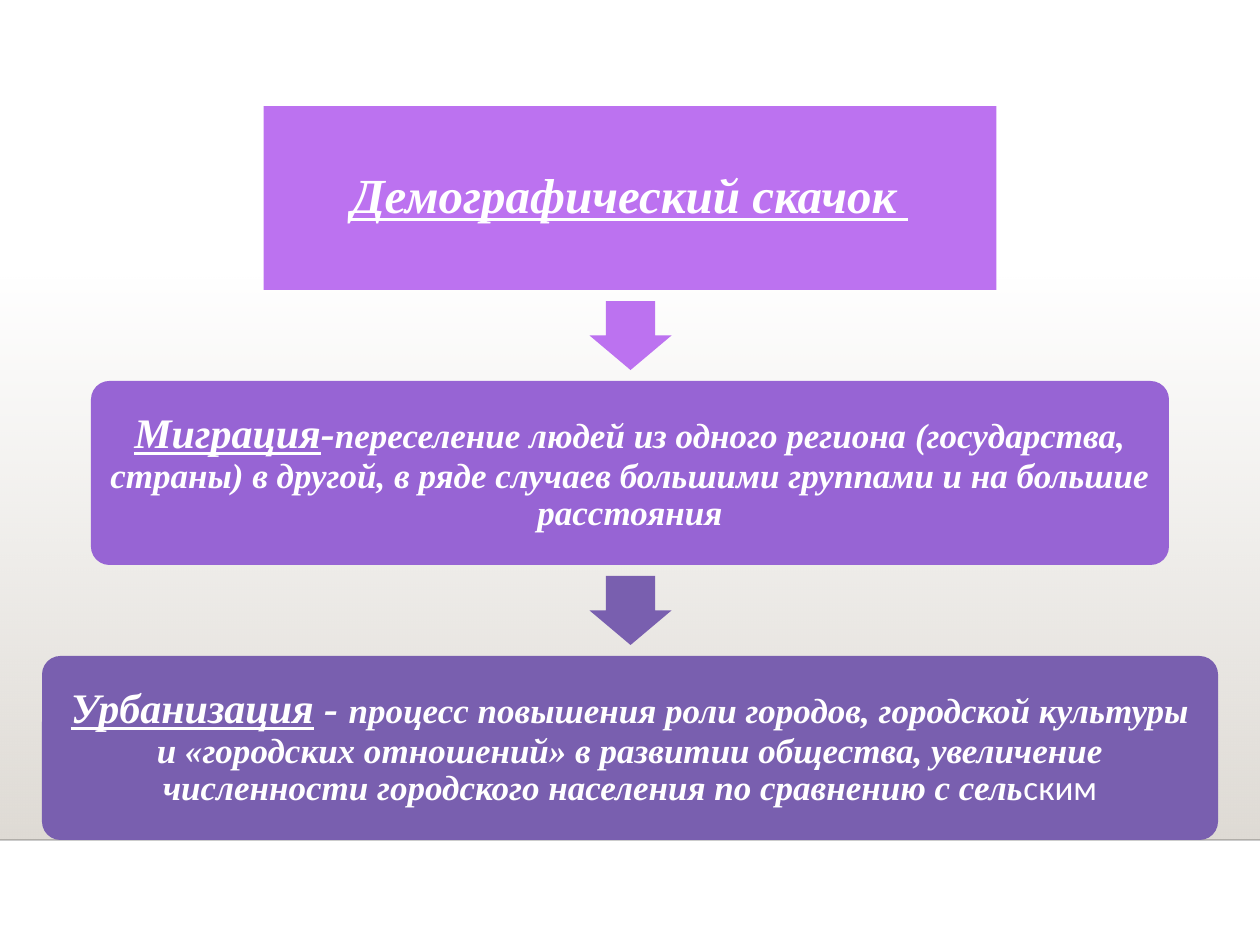
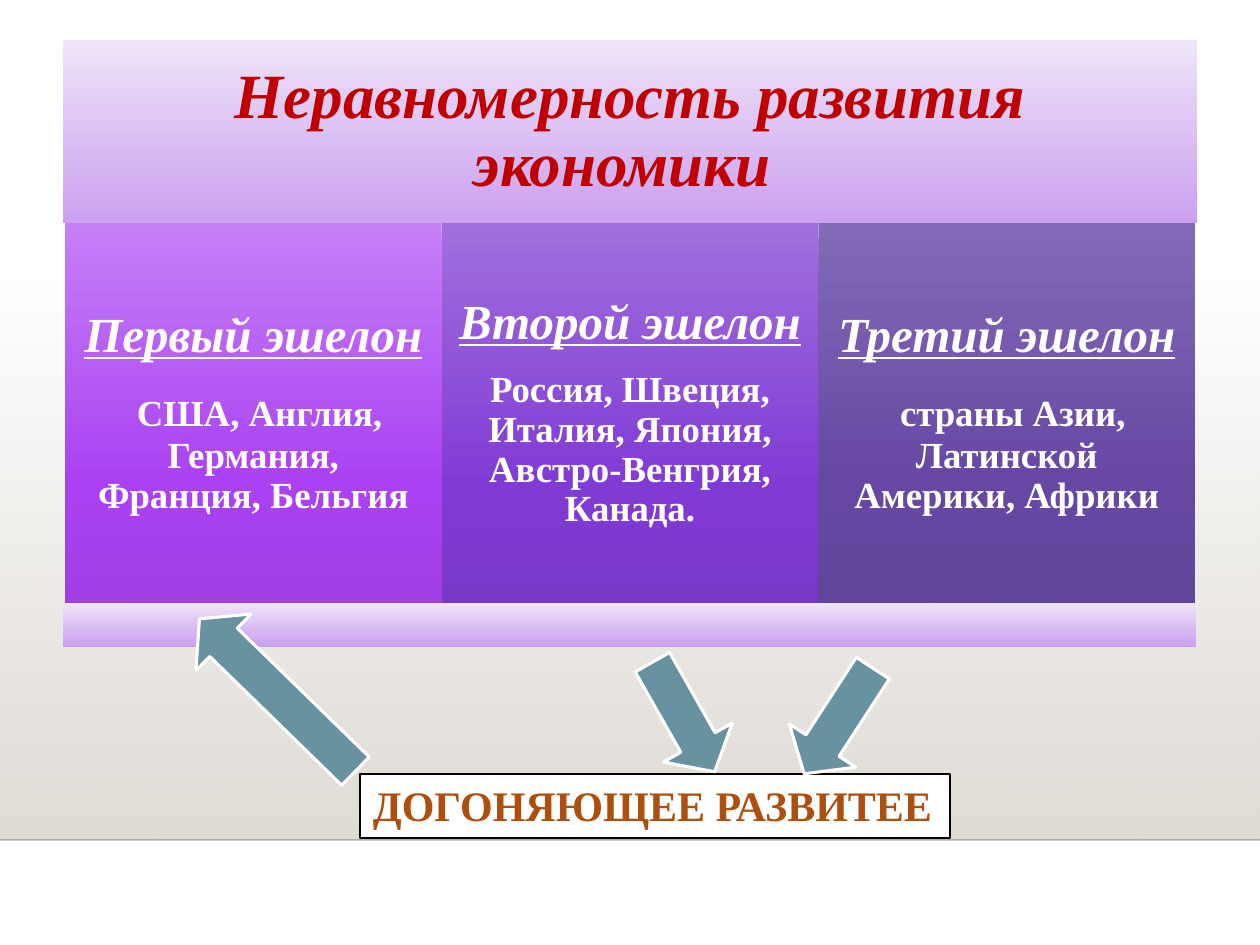
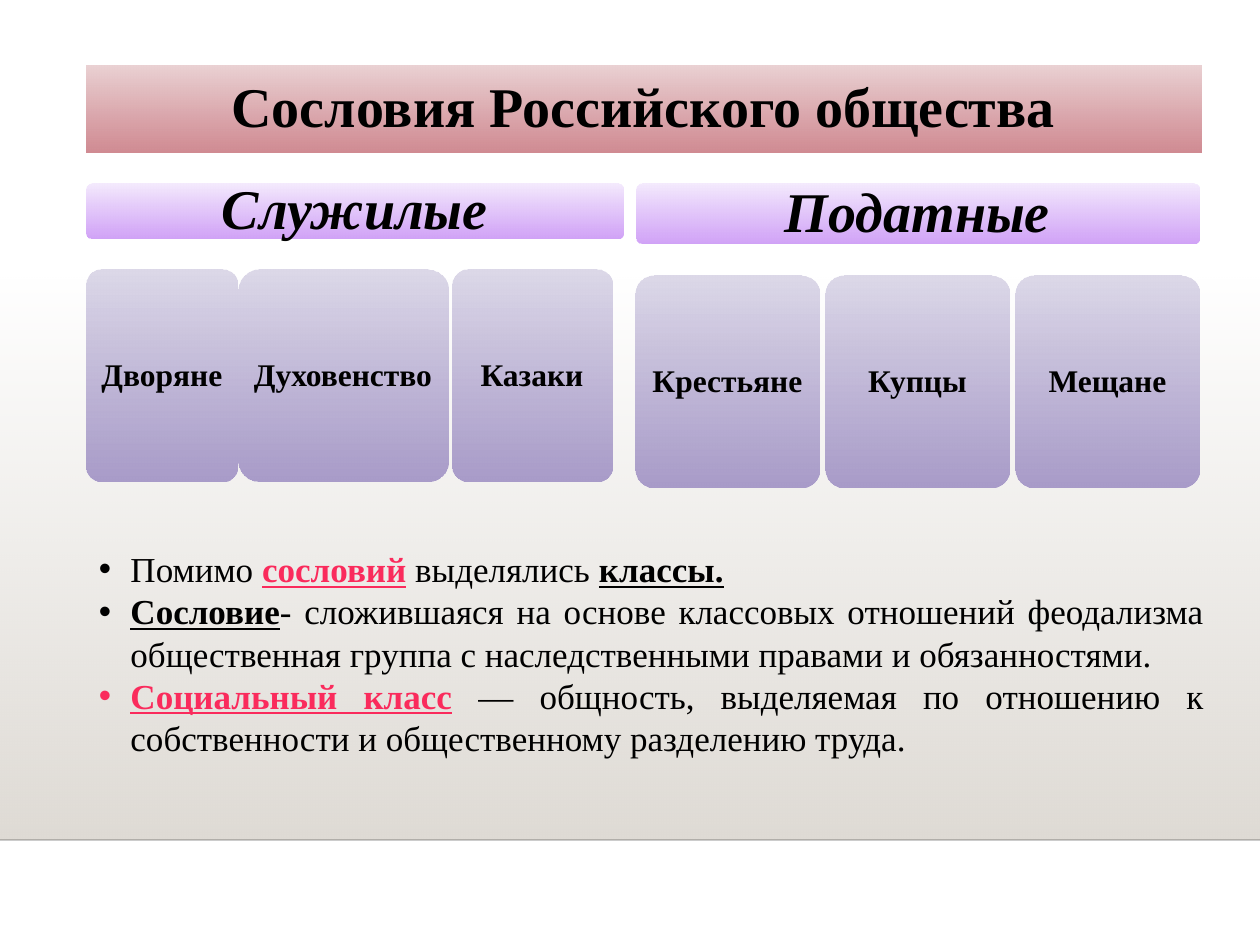
import pptx
import pptx.util
import pptx.dml.color
import pptx.enum.shapes
import pptx.enum.text
import pptx.oxml
import pptx.oxml.ns
from lxml import etree

PX = 914400 / 126  # EMU in one px
SERIF = "Times New Roman"
C = {
    "white": "FFFFFF", "black": "000000", "rule": "000001", "haze": "DFDBD5",
    "orchid": "BC72F0", "violet": "9764D4", "plum": "795FAF",
    "red": "C00000", "rose": "FA2B5C", "rust": "AD4F0F", "teal": "6892A0",
}
# Gradient stops: position %, colour, opacity %
GRAD = {
    "haze": [(0, C["haze"], 0), (100, C["haze"], 100)],
    "lilac": [(0, "F0E6FA", 100), (100, "C89AEF", 92)],
    "first": [(0, "C57FF7", 100), (69, "AA41F3", 100), (100, "A13FE5", 100)],
    "second": [(0, "A06FDD", 100), (69, "813BD5", 100), (100, "7A38C9", 100)],
    "third": [(0, "836AB8", 100), (69, "6648A3", 100), (100, "60459A", 100)],
    "pink": [(0, "EAD1D3", 100), (100, "CD828A", 92)],
    "heading": [(0, "F4EAFD", 100), (100, "CE9CF7", 92)],
    "estate": [(0, "DCD8E8", 100), (100, "A395C6", 92)],
}
SHAPE = pptx.enum.shapes.MSO_SHAPE
ALIGN = pptx.enum.text.PP_ALIGN
ANCHOR = pptx.enum.text.MSO_ANCHOR
AUTO = pptx.enum.text.MSO_AUTO_SIZE
qn = pptx.oxml.ns.qn


def px(n):
    return pptx.util.Emu(round(n * PX))


def rgb(color):
    return pptx.dml.color.RGBColor.from_string(color)


def add_alpha(clr, percent):
    etree.SubElement(clr, qn("a:alpha"), val=str(percent * 1000))


def paint(sp, fill, line=None, line_width=1):
    """Fill with a hex colour or a list of gradient stops, running downwards."""
    if isinstance(fill, str):
        sp.fill.solid()
        sp.fill.fore_color.rgb = rgb(fill)
    else:
        sp.fill.gradient()
        sp.fill.gradient_angle = 270
        stops = sp.element.spPr.find(qn("a:gradFill")).find(qn("a:gsLst"))
        for gs in list(stops):
            stops.remove(gs)
        for pos, color, opacity in fill:
            gs = etree.SubElement(stops, qn("a:gs"), pos=str(pos * 1000))
            clr = etree.SubElement(gs, qn("a:srgbClr"), val=color)
            if opacity < 100:
                add_alpha(clr, opacity)
    if line:
        sp.line.color.rgb = rgb(line)
        sp.line.width = pptx.util.Pt(line_width)
    else:
        sp.line.fill.background()


def add_box(s, kind, x, y, w, h, fill, adj=(), rotation=0, **line):
    sp = s.shapes.add_shape(kind, px(x), px(y), px(w), px(h))
    sp.shadow.inherit = False
    sp.rotation = rotation
    for i, value in enumerate(adj):
        sp.adjustments[i] = value
    paint(sp, fill, **line)
    return sp


def add_title(s, x, y, w, h, fill, rounded=False):
    sp = s.shapes.title
    sp.left, sp.top, sp.width, sp.height = px(x), px(y), px(w), px(h)
    geom = etree.SubElement(sp.element.spPr, qn("a:prstGeom"),
                            prst="roundRect" if rounded else "rect")
    guides = etree.SubElement(geom, qn("a:avLst"))
    if rounded:
        etree.SubElement(guides, qn("a:gd"), name="adj", fmla="val 10000")
    paint(sp, fill)
    return sp


def add_run(p, text, size=20, color=C["white"], bold=True, italic=False,
            underline=False, font=SERIF):
    for i, part in enumerate(text.split("\n")):
        if i:
            p.add_line_break()
        r = p.add_run()
        r.text = part
        r.font.name = font
        r.font.size = pptx.util.Pt(size)
        r.font.bold, r.font.italic, r.font.underline = bold, italic, underline
        r.font.color.rgb = rgb(color)


def write(sp, *paragraphs, inset=13, align=ALIGN.CENTER, spacing=0.9, after=0):
    """Each paragraph is a list of (text, format) runs."""
    tf = sp.text_frame
    tf.word_wrap = True
    tf.auto_size = AUTO.NONE
    tf.vertical_anchor = ANCHOR.MIDDLE
    tf.margin_left = tf.margin_right = tf.margin_top = tf.margin_bottom = px(inset)
    for i, runs in enumerate(paragraphs):
        p = tf.add_paragraph() if i else tf.paragraphs[0]
        p.alignment = align
        p.line_spacing = spacing
        p.space_after = pptx.util.Pt(after)
        for text, fmt in runs:
            add_run(p, text, **fmt)
    return tf


def add_backdrop(prs, s):
    """Haze and rule, drawn on a slide and moved to the master."""
    haze = add_box(s, SHAPE.RECTANGLE, 0, 277, 1260, 563, GRAD["haze"])
    rule = s.shapes.add_connector(pptx.enum.shapes.MSO_CONNECTOR.STRAIGHT,
                                  px(0), px(840), px(1260), px(840))
    rule.line.width = pptx.util.Pt(1)
    rule.line.color.rgb = rgb(C["rule"])
    add_alpha(rule.element.find(".//" + qn("a:srgbClr")), 20)
    etree.SubElement(rule.element.spPr, qn("a:effectLst"))
    tree = prs.slide_master.shapes.element
    for i, sp in enumerate((haze, rule)):
        sp.element.find(".//" + qn("p:cNvPr")).set("id", str(100 + i))
        tree.insert(2 + i, sp.element)


# Slide 1: a chain of three steps
def add_chain(s, center, top, height, gap, steps):
    for i, (width, fill, inset, runs) in enumerate(steps):
        y = top + i * (height + gap)
        x = center - width / 2
        if i == 0:
            sp = add_title(s, x, y, width, height, fill, rounded=True)
        else:
            sp = add_box(s, SHAPE.ROUNDED_RECTANGLE, x, y, width, height, fill, adj=[0.1])
        write(sp, runs, inset=inset)
        if i < len(steps) - 1:
            arrow_fill = C["orchid"] if i == 0 else C["plum"]
            add_box(s, SHAPE.RIGHT_ARROW, center - 34, y + height + gap / 2 - 41, 69, 82,
                    arrow_fill, adj=[0.6, 0.5], rotation=90)


def build_processes(s):
    slant = dict(italic=True)
    term = dict(size=24, italic=True, underline=True)
    add_chain(s, 630, 106, 184, 91, [
        (733, C["orchid"], 15,
         [("Демографический скачок ", dict(term, size=28))]),
        (1078, C["violet"], 13, [
            ("Миграция", term),
            ("-", dict(size=24, italic=True)),
            ("переселение людей из одного региона (государства, страны) в другой, "
             "в ряде случаев большими группами и на большие расстояния", slant)]),
        (1176, C["plum"], 13, [
            ("Урбанизация", term),
            (" - ", dict(size=24, italic=True)),
            ("процесс повышения роли городов, городской культуры и «городских "
             "отношений» в развитии общества, увеличение численности городского "
             "населения по сравнению с сель", slant),
            ("ским", dict(bold=False, font="Calibri"))]),
    ])


# Slide 2: three echelons and the catching-up label
def add_echelons(s, x, y, w, h, columns):
    col_w = w / len(columns)
    for i, (fill, heading, body) in enumerate(columns):
        sp = add_box(s, SHAPE.RECTANGLE, x + i * col_w, y, col_w, h, fill)
        write(sp, [(heading, dict(size=28, italic=True, underline=True))], body,
              inset=15, after=12)


def build_echelons(s):
    title = add_title(s, 64, 41, 1132, 182, GRAD["lilac"])
    write(title, [("Неравномерность развития экономики ",
                   dict(size=36, color=C["red"], italic=True))], inset=19)
    lead, body = dict(size=28), dict(size=21)
    add_echelons(s, 65, 223, 1130, 381, [
        (GRAD["first"], "Первый эшелон",
         [(" ", lead), ("США, Англия, Германия,\nФранция, Бельгия", body)]),
        (GRAD["second"], "Второй эшелон ",
         [("Россия, Швеция, Италия, Япония, Австро-Венгрия, Канада.", body)]),
        (GRAD["third"], "Третий эшелон",
         [(" ", lead), ("страны Азии, Латинской Америки, Африки", body)]),
    ])
    add_box(s, SHAPE.RECTANGLE, 64, 604, 1132, 43, GRAD["lilac"])

    # Label and its arrows
    label = add_box(s, SHAPE.RECTANGLE, 360, 774, 590, 64, C["white"],
                    line=C["black"], line_width=1.25)
    tf = write(label, [("ДОГОНЯЮЩЕЕ РАЗВИТЕЕ", dict(size=24, color=C["rust"]))],
               align=ALIGN.LEFT, spacing=1.0)
    tf.margin_top = tf.margin_bottom = px(6)
    tf.word_wrap = False
    tf.vertical_anchor = ANCHOR.TOP
    for x, y, length, rotation in [(644, 654, 126, 330.4), (799, 658, 126, 33),
                                   (238, 586, 218, 134.3)]:
        add_box(s, SHAPE.DOWN_ARROW, x, y, 79, length, C["teal"], adj=[0.5, 0.425],
                rotation=rotation, line=C["white"], line_width=1.75)


# Slide 3: estates and definitions
def add_estates(s, x, y, w, head_h, heading, members):
    """Members are (name, offset from x, width)."""
    head = add_box(s, SHAPE.ROUNDED_RECTANGLE, x, y, w, head_h, GRAD["heading"], adj=[0.1])
    write(head, [(heading, dict(size=32, color=C["black"], italic=True))], inset=16)
    for name, offset, width in members:
        sp = add_box(s, SHAPE.ROUNDED_RECTANGLE, x + offset, y + head_h + 32, width, 212,
                     GRAD["estate"], adj=[0.1])
        write(sp, [(name, dict(size=18, color=C["black"]))], inset=9)


def add_bullets(s, x, y, w, h, paragraphs):
    sp = s.shapes.add_textbox(px(x), px(y), px(w), px(h))
    tf = write(sp, *paragraphs, align=ALIGN.JUSTIFY, spacing=1.0)
    tf.margin_top = tf.margin_bottom = px(6)
    tf.vertical_anchor = ANCHOR.TOP
    tf.auto_size = AUTO.SHAPE_TO_FIT_TEXT
    for p in tf.paragraphs:
        pPr = p._p.get_or_add_pPr()
        pPr.set("marL", "228600")
        pPr.set("indent", "-228600")
        etree.SubElement(pPr, qn("a:buFont"), typeface="Arial")
        etree.SubElement(pPr, qn("a:buChar"), char="•")


def build_estates(s):
    title = add_title(s, 86, 66, 1115, 87, GRAD["pink"], rounded=True)
    write(title, [("Сословия Российского общества", dict(size=32, color=C["black"]))],
          inset=16)
    add_estates(s, 87, 184, 536, 54, "Служилые", [
        ("Дворяне", 0, 150), ("Духовенство", 151, 210), ("Казаки", 365, 160)])
    add_estates(s, 636, 184, 563, 60, "Податные", [
        (name, i * 190, 183) for i, name in enumerate(["Крестьяне", "Купцы", "Мещане"])])

    plain = dict(color=C["black"], bold=False)
    strong = dict(color=C["black"], underline=True)
    accent = dict(color=C["rose"], underline=True)
    add_bullets(s, 86, 542, 1131, 224, [
        [("Помимо ", plain), ("сословий", accent), (" выделялись ", plain),
         ("классы.", strong)],
        [("Сословие", strong),
         ("- сложившаяся на основе классовых отношений феодализма общественная "
          "группа с наследственными правами и обязанностями.", plain)],
        [("Социальный класс", accent),
         (" — общность, выделяемая по отношению к собственности и общественному "
          "разделению труда.", plain)],
    ])


def main():
    prs = pptx.Presentation()
    prs.slide_width, prs.slide_height = px(1260), px(945)
    title_only = prs.slide_layouts[5]
    for i, build in enumerate([build_processes, build_echelons, build_estates]):
        s = prs.slides.add_slide(title_only)
        if i == 0:
            add_backdrop(prs, s)
        build(s)
    prs.save("out.pptx")


if __name__ == "__main__":
    main()
